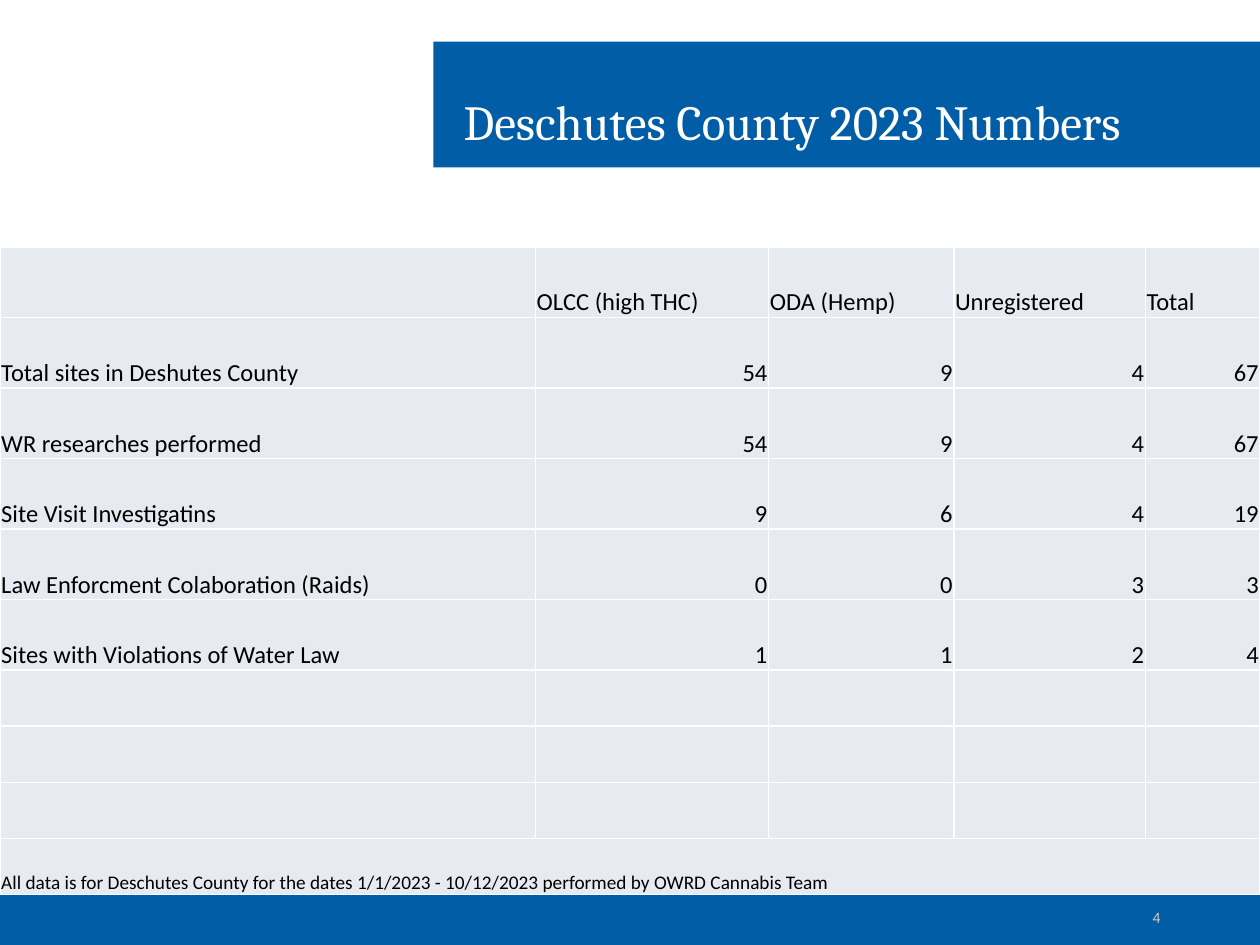
import pptx
import pptx.dml.color
import pptx.enum.shapes
import pptx.enum.text
import pptx.oxml
import pptx.oxml.ns
import pptx.util
from lxml import etree

HEADING = "Deschutes County 2023 Numbers"
PAGE_NUMBER = "4"
COLUMNS = ["", "OLCC (high THC)", "ODA (Hemp)", "Unregistered", "Total"]
COUNTS = [
    ("Total sites in Deshutes County", 54, 9, 4, 67),
    ("WR researches performed", 54, 9, 4, 67),
    ("Site Visit Investigatins", 9, 6, 4, 19),
    ("Law Enforcment Colaboration (Raids)", 0, 0, 3, 3),
    ("Sites with Violations of Water Law", 1, 1, 2, 4),
]
SPARE_ROWS = 3
FOOTNOTE = ("All data is for Deschutes County for the dates 1/1/2023 - 10/12/2023 "
            "performed by OWRD Cannabis Team")

WIDTH, HEIGHT = 10, 7.5
COLUMN_WIDTHS = [4.25, 1.85, 1.47, 1.52, 0.91]
TALL, SHORT = 0.56, 0.445
TABLE_TOP = 1.96
FOOTER_TOP = 7.08
BLUE, PALE, WHITE, BLACK, SAND = "005DA6", "E7EAF1", "FFFFFF", "000000", "D3CCBD"

ALIGN = pptx.enum.text.PP_ALIGN
ANCHOR = pptx.enum.text.MSO_ANCHOR
inches = pptx.util.Inches


def color(value):
    return pptx.dml.color.RGBColor.from_string(value)


def write(frame, text, size=14, font="Calibri", ink=BLACK, align=ALIGN.LEFT, spacing=None):
    paragraph = frame.paragraphs[0]
    paragraph.text = text
    paragraph.alignment = align
    paragraph.line_spacing = spacing
    paragraph.font.size = pptx.util.Pt(size)
    paragraph.font.name = font
    paragraph.font.color.rgb = color(ink)


def add_band(slide, left, top, width, height):
    band = slide.shapes.add_shape(pptx.enum.shapes.MSO_SHAPE.RECTANGLE,
                                  inches(left), inches(top), inches(width), inches(height))
    band.shadow.inherit = False
    band.fill.solid()
    band.fill.fore_color.rgb = color(BLUE)
    band.line.fill.background()
    return band


def style_cell(cell):
    properties = cell._tc.get_or_add_tcPr()
    for side in ("lnL", "lnR", "lnT", "lnB"):
        border = etree.SubElement(properties, pptx.oxml.ns.qn(f"a:{side}"), w="12700")
        fill = etree.SubElement(border, pptx.oxml.ns.qn("a:solidFill"))
        etree.SubElement(fill, pptx.oxml.ns.qn("a:srgbClr"), val=WHITE)
    cell.fill.solid()
    cell.fill.fore_color.rgb = color(PALE)
    cell.vertical_anchor = ANCHOR.BOTTOM
    cell.margin_left = cell.margin_right = cell.margin_top = inches(0.01)
    cell.margin_bottom = 0


def paint_background(slide):
    fill = slide.background.fill
    fill.gradient()
    fill.gradient_angle = 270
    for stop, (position, shade) in zip(fill.gradient_stops, [(0.5, WHITE), (1, "BBD6F0")]):
        stop.position = position
        stop.color.rgb = color(shade)


def add_title(slide):
    title = slide.shapes.title
    title.left, title.top = inches(3.58), inches(0.42)
    title.width, title.height = inches(6.17), inches(0.83)
    title.text_frame.vertical_anchor = ANCHOR.BOTTOM
    write(title.text_frame, HEADING, size=28, font="Cambria", ink=WHITE, spacing=0.9)
    for band in (add_band(slide, 0, FOOTER_TOP, WIDTH, HEIGHT - FOOTER_TOP),
                 add_band(slide, 3.44, 0.33, WIDTH - 3.44, 1)):
        title.element.addprevious(band.element)


def add_counts(slide):
    rows = [COLUMNS, *COUNTS, *[[""] * len(COLUMNS)] * SPARE_ROWS,
            [FOOTNOTE] + [""] * (len(COLUMNS) - 1)]
    heights = [TALL] * (1 + len(COUNTS)) + [SHORT] * (SPARE_ROWS + 1)
    table = slide.shapes.add_table(len(rows), len(COLUMNS), 0, inches(TABLE_TOP),
                                   inches(WIDTH), inches(sum(heights))).table
    table.first_row = table.horz_banding = False
    for column, width in zip(table.columns, COLUMN_WIDTHS):
        column.width = inches(width)
    for row, height, values in zip(table.rows, heights, rows):
        row.height = inches(height)
        for cell, value in zip(row.cells, values):
            style_cell(cell)
            write(cell.text_frame, str(value), size=11 if values is rows[-1] else 14,
                  align=ALIGN.RIGHT if isinstance(value, int) else ALIGN.LEFT)
    last = len(rows) - 1
    table.cell(last, 0).merge(table.cell(last, len(COLUMNS) - 1))


def add_page_number(slide):
    number = slide.shapes.add_textbox(inches(7.06), inches(FOOTER_TOP), inches(2.25), inches(0.4))
    number.text_frame.word_wrap = True
    number.text_frame.vertical_anchor = ANCHOR.MIDDLE
    write(number.text_frame, PAGE_NUMBER, size=9, ink=SAND, align=ALIGN.RIGHT)


def main():
    deck = pptx.Presentation()
    deck.slide_width, deck.slide_height = inches(WIDTH), inches(HEIGHT)
    slide = deck.slides.add_slide(deck.slide_layouts[5])
    paint_background(slide)
    add_title(slide)
    add_counts(slide)
    add_page_number(slide)
    deck.save("out.pptx")


if __name__ == "__main__":
    main()
